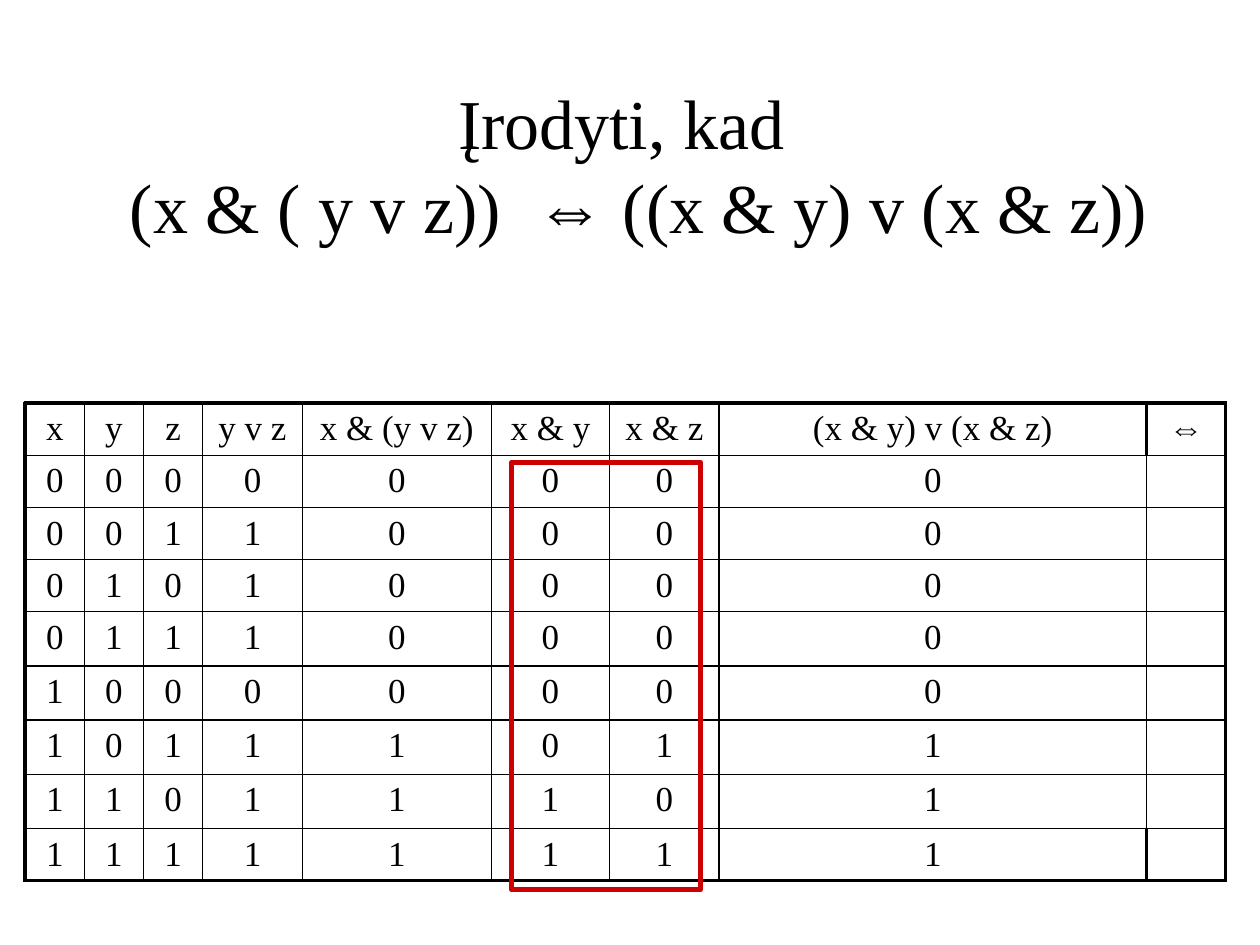
from itertools import product

from lxml.etree import SubElement as Sub
from pptx import Presentation
from pptx.dml.color import RGBColor as RGB
from pptx.enum.shapes import MSO_SHAPE as Shape
from pptx.enum.text import MSO_ANCHOR as Anchor, PP_ALIGN as Align
from pptx.oxml.ns import qn
from pptx.util import Inches, Pt

COLORS = {"ink": "000000", "mark": "CC0000"}
FONT = "Times New Roman"


def style(para, size):
    para.alignment = Align.CENTER
    para.font.name = FONT
    para.font.size = Pt(size)
    para.font.color.rgb = RGB.from_string(COLORS["ink"])


def border(cell, wide):
    props = cell._tc.get_or_add_tcPr()
    for side in "LRTB":
        width = Pt(2.25 if side in wide else 1)
        line = Sub(props, qn(f"a:ln{side}"), w=str(width))
        fill = Sub(line, qn("a:solidFill"))
        Sub(fill, qn("a:srgbClr"), val=COLORS["ink"])


prs = Presentation()
prs.slide_width, prs.slide_height = Inches(10), Inches(7.5)
slide = prs.slides.add_slide(prs.slide_layouts[6])

title = slide.shapes.add_textbox(Inches(0.75), Inches(0.67), Inches(8.5), Inches(1.25))
frame = title.text_frame
frame.word_wrap = True
frame.vertical_anchor = Anchor.MIDDLE
frame.text = "Įrodyti, kad \v (x & ( y v z))  ⇔ ((x & y) v (x & z))"
style(frame.paragraphs[0], 40)

rows = [["x", "y", "z", "y v z", "x & (y v z)", "x & y", "x & z", "(x & y) v (x & z)", "⇔"]]
for x, y, z in product((0, 1), repeat=3):
    rows.append([x, y, z, y | z, x & (y | z), x & y, x & z, x & y | x & z, ""])

widths = [0.47, 0.47, 0.47, 0.79, 1.5, 0.94, 0.87, 3.39, 0.63]
heights = [0.41] * 4 + [0.43] * 4 + [0.41]
last = len(rows) - 1
end = len(widths) - 1
holder = slide.shapes.add_table(
    len(rows), len(widths), Inches(0.2), Inches(3.2), Inches(sum(widths)), Inches(sum(heights))
)
table = holder.table
for col, width in zip(table.columns, widths):
    col.width = Inches(width)
for row, height in zip(table.rows, heights):
    row.height = Inches(height)

for r, values in enumerate(rows):
    for c, value in enumerate(values):
        cell = table.cell(r, c)
        cell.margin_bottom = Inches(0.03)
        cell.text = str(value)
        para = cell.text_frame.paragraphs[0]
        style(para, 20)
        para.font.bold = value == "⇔"
        edge = r in (0, last)
        wide = {
            "L": c == 0 or edge and c == end,
            "R": c == end or edge and c == end - 1,
            "T": r == 0,
            "B": r == last,
        }
        border(cell, [side for side in wide if wide[side]])
        cell.fill.background()

box = slide.shapes.add_shape(
    Shape.RECTANGLE, Inches(4.06), Inches(3.67), Inches(1.5), Inches(3.39)
)
box.shadow.inherit = False
box.fill.background()
box.line.color.rgb = RGB.from_string(COLORS["mark"])
box.line.width = Pt(3)

prs.save("out.pptx")
